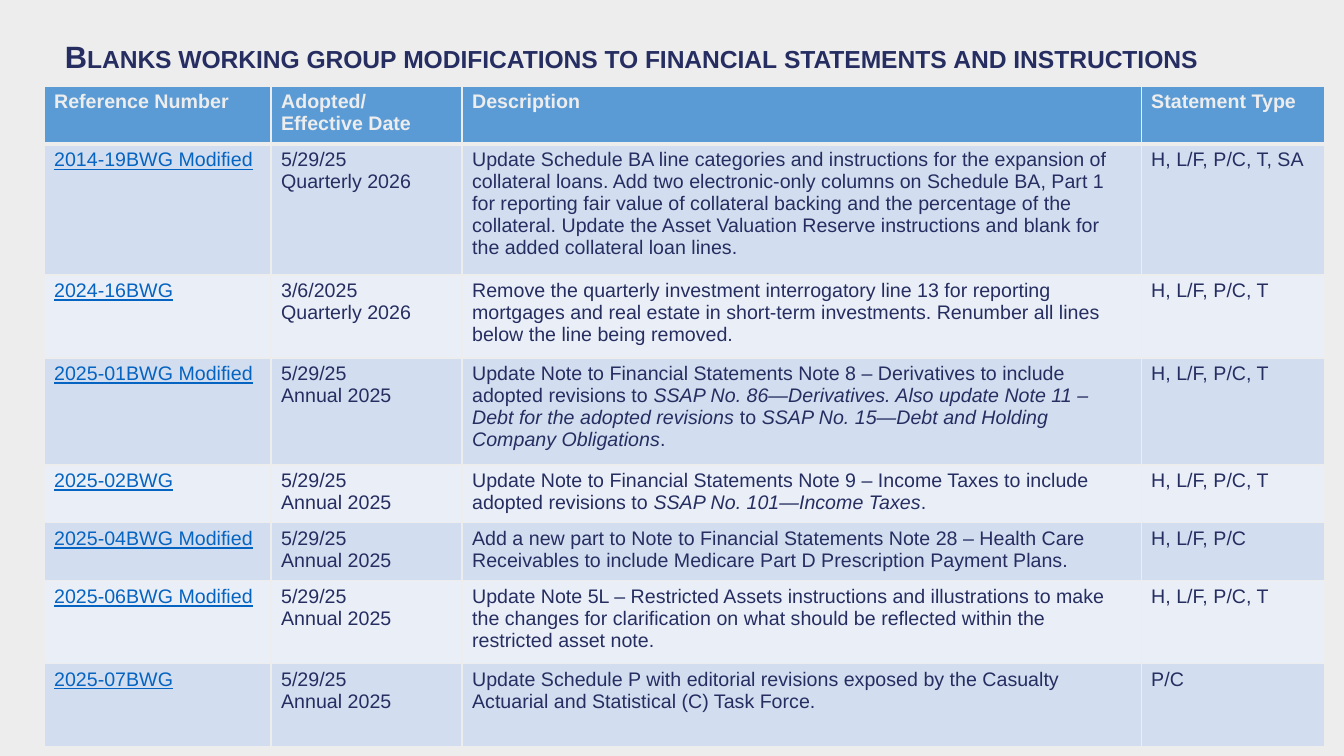
import pptx
import pptx.dml.color
import pptx.enum.text
import pptx.oxml
import pptx.oxml.ns
import pptx.util

PX = 9071  # EMU per px, at 100.8 px to the inch
PALE, NAVY, LINK, HEAD = "EDEDEE", "262E61", "0563C1", "5B9BD5"
BANDS = ["D2DEEF", "EAEFF7"]


def color(code):
    return pptx.dml.color.RGBColor.from_string(code)


def add_run(para, text, size, code, bold=False):
    run = para.add_run()
    run.text = text
    run.font.name = "Arial"
    run.font.size = pptx.util.Pt(size)
    run.font.bold = bold
    run.font.color.rgb = color(code)
    return run


deck = pptx.Presentation()
deck.slide_width = pptx.util.Inches(13.33)
deck.slide_height = pptx.util.Inches(7.5)
slide = deck.slides.add_slide(deck.slide_layouts[6])
slide.background.fill.solid()
slide.background.fill.fore_color.rgb = color(PALE)

# Title in small capitals
box = slide.shapes.add_textbox(55 * PX, 37 * PX, 1203 * PX, 75 * PX)
box.text_frame.word_wrap = True
box.text_frame.vertical_anchor = pptx.enum.text.MSO_ANCHOR.TOP
para = box.text_frame.paragraphs[0]
para.line_spacing = 0.9
title = add_run(para, "Blanks working group modifications to financial statements and instructions",
                22, NAVY, True)
title.font._element.set("cap", "small")

# Table wording: \n starts a paragraph, \v breaks a line, * switches italics
rows = [
    ("Reference Number", "Adopted/\nEffective Date", "Description", "Statement Type"),
    ("2014-19BWG Modified", "5/29/25\vQuarterly 2026",
     "Update Schedule BA line categories and instructions for the expansion of collateral loans. "
     "Add two electronic-only columns on Schedule BA, Part 1 for reporting fair value of collateral "
     "backing and the percentage of the collateral. Update the Asset Valuation Reserve instructions "
     "and blank for the added collateral loan lines.",
     "H, L/F, P/C, T, SA"),
    ("2024-16BWG", "3/6/2025\nQuarterly 2026",
     "Remove the quarterly investment interrogatory line 13 for reporting mortgages and real estate "
     "in short-term investments. Renumber all lines below the line being removed.",
     "H, L/F, P/C, T"),
    ("2025-01BWG Modified", "5/29/25\vAnnual 2025",
     "Update Note to Financial Statements Note 8 – Derivatives to include adopted revisions to "
     "*SSAP No. 86—Derivatives. Also update Note 11 – Debt for the adopted revisions *to "
     "*SSAP No. 15—Debt and Holding Company Obligations*.",
     "H, L/F, P/C, T"),
    ("2025-02BWG", "5/29/25\vAnnual 2025",
     "Update Note to Financial Statements Note 9 – Income Taxes to include adopted revisions to "
     "*SSAP No. 101—Income Taxes*.",
     "H, L/F, P/C, T"),
    ("2025-04BWG Modified", "5/29/25\vAnnual 2025",
     "Add a new part to Note to Financial Statements Note 28 – Health Care Receivables to include "
     "Medicare Part D Prescription Payment Plans.",
     "H, L/F, P/C"),
    ("2025-06BWG Modified", "5/29/25\vAnnual 2025",
     "Update Note 5L – Restricted Assets instructions and illustrations to make the changes for "
     "clarification on what should be reflected within the restricted asset note.",
     "H, L/F, P/C, T"),
    ("2025-07BWG", "5/29/25\vAnnual 2025",
     "Update Schedule P with editorial revisions exposed by the Casualty Actuarial and Statistical "
     "(C) Task Force.",
     "P/C"),
]
widths = [227, 191, 679, 183]
heights = [58, 131, 83, 107, 58, 58, 83, 83]

# Table grid
frame = slide.shapes.add_table(len(rows), len(widths), 44 * PX, 86 * PX,
                               sum(widths) * PX, sum(heights) * PX)
table = frame.table
for col, width in zip(table.columns, widths):
    col.width = width * PX
for row, height in zip(table.rows, heights):
    row.height = height * PX

# Cells
for r, row in enumerate(rows):
    for c, words in enumerate(row):
        cell = table.cell(r, c)
        cell.fill.solid()
        cell.fill.fore_color.rgb = color(BANDS[(r - 1) % 2] if r else HEAD)

        # Borders, with a thick rule under the header
        props = cell._tc.get_or_add_tcPr()
        for i, side in enumerate(["L", "R", "T", "B"]):
            thick = (r, side) in [(0, "B"), (1, "T")]
            props.insert(i, pptx.oxml.parse_xml(
                f'<a:ln{side} {pptx.oxml.ns.nsdecls("a")} w="{38100 if thick else 12700}">'
                f'<a:solidFill><a:srgbClr val="{PALE}"/></a:solidFill></a:ln{side}>'))

        # Text
        ink = PALE if r == 0 else LINK if c == 0 else NAVY
        for p, block in enumerate(words.split("\n")):
            text = cell.text_frame
            para = text.add_paragraph() if p else text.paragraphs[0]
            for b, line in enumerate(block.split("\v")):
                if b:
                    para.add_line_break()
                for k, part in enumerate(line.split("*")):
                    run = add_run(para, part, 14, ink, r == 0)
                    run.font.italic = k % 2 == 1
                    run.font.underline = ink == LINK

deck.save("out.pptx")
